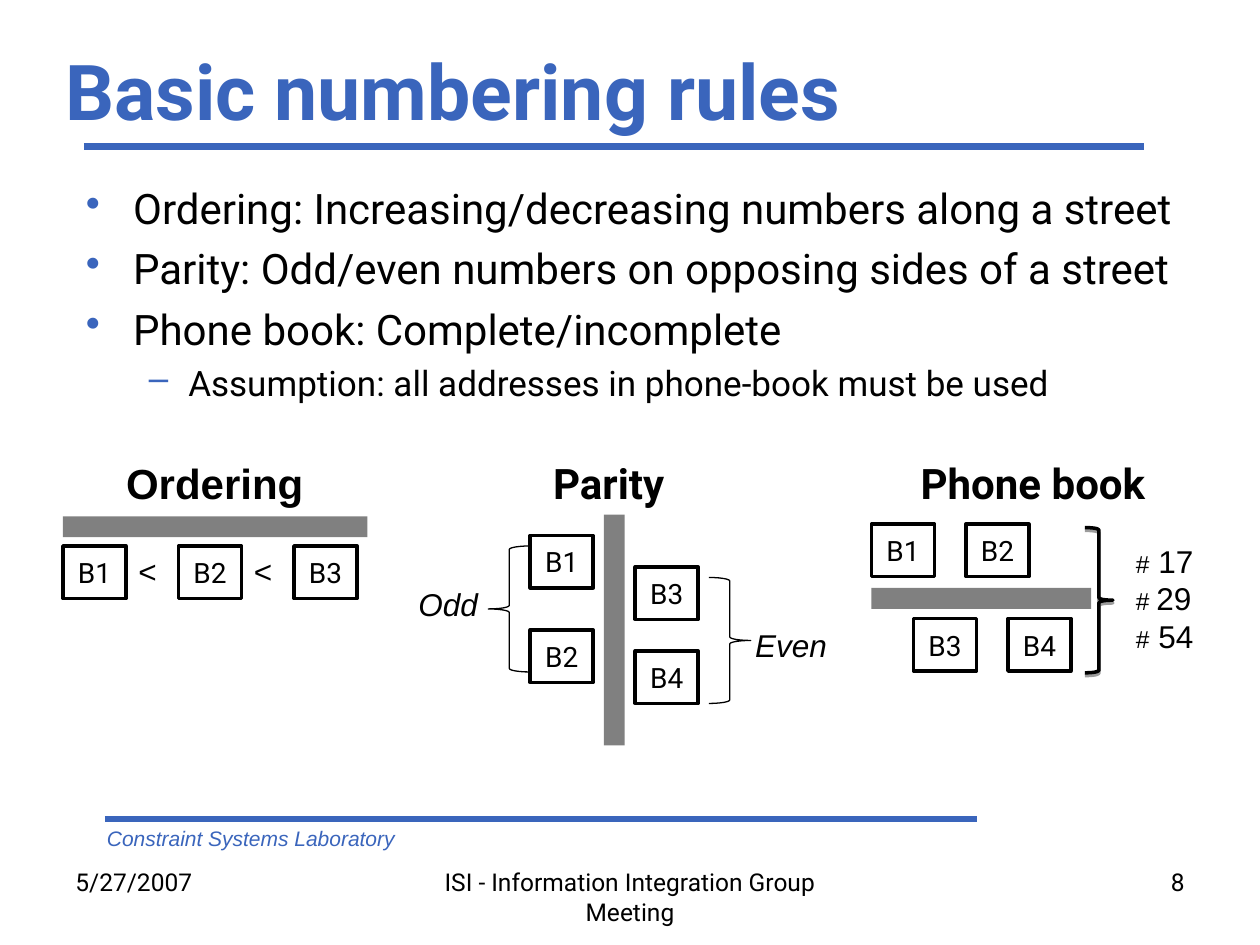
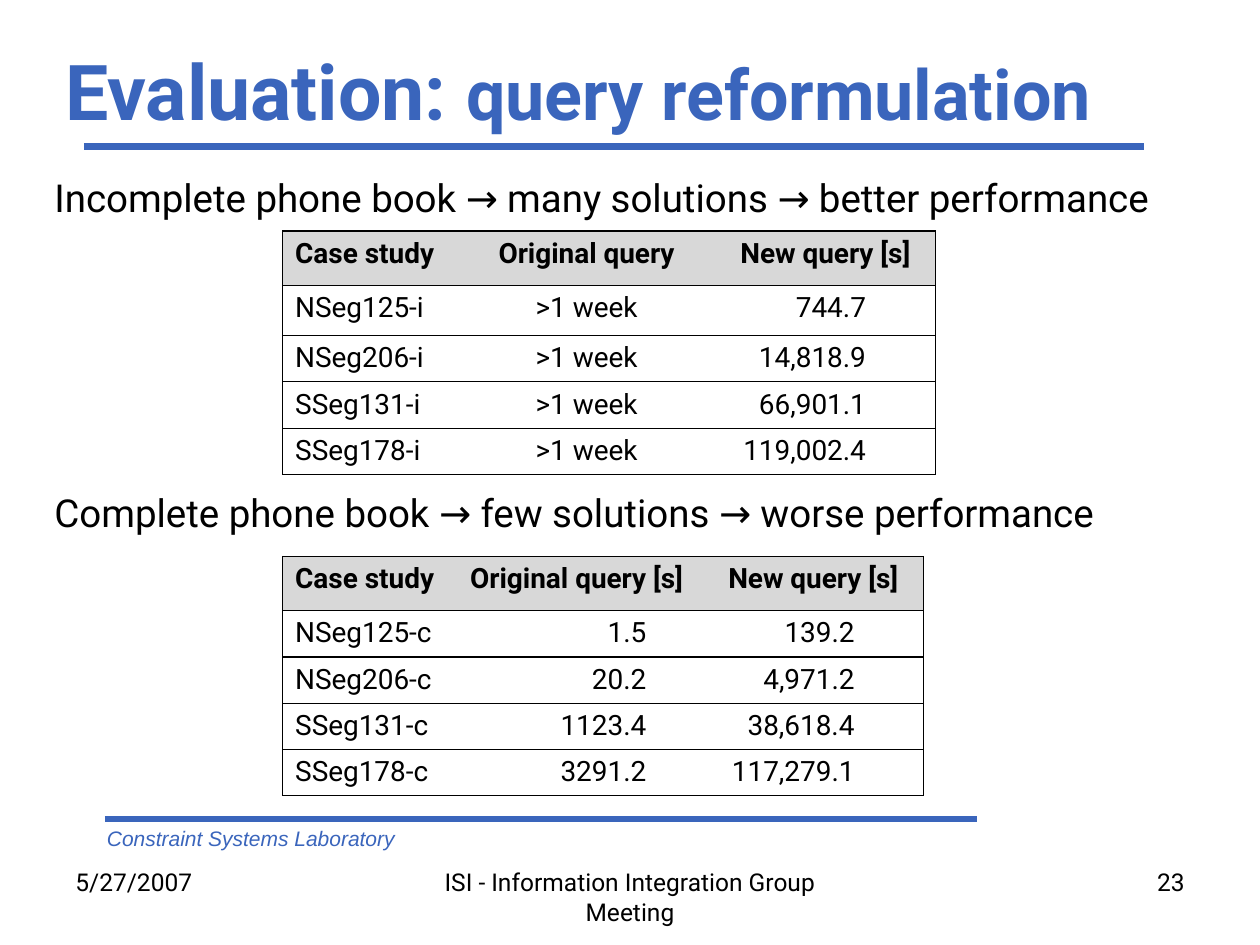
"""Build two slides on house numbering rules and query reformulation results."""
from lxml.etree import SubElement
from pptx import Presentation
from pptx.dml.color import RGBColor
from pptx.enum.shapes import MSO_CONNECTOR, MSO_SHAPE as SHAPE
from pptx.enum.text import MSO_ANCHOR as ANCHOR, MSO_AUTO_SIZE, PP_ALIGN as ALIGN
from pptx.oxml import parse_xml
from pptx.oxml.ns import nsdecls, qn
from pptx.util import Pt

BLUE, BLACK, WHITE, GREY, HEADER_GREY = "3A65BC", "000000", "FFFFFF", "808080", "D8D8D8"
BODY_FONT, LABEL_FONT = "Roboto", "Arial"
LEFT, CENTER, RIGHT = ALIGN.LEFT, ALIGN.CENTER, ALIGN.RIGHT
BOX_WIDTH, BOX_HEIGHT = 36, 30


def color(value):
    return RGBColor.from_string(value)


def place(left, top, width, height):
    return [Pt(length) for length in (left, top, width, height)]


class SlideBuilder:
    def __init__(self, deck):
        self.deck = deck
        self.slide = None

    def start(self, title_runs, number):
        self.slide = self.deck.slides.add_slide(self.deck.slide_layouts[5])
        title = self.slide.shapes.title
        title.left, title.top, title.width, title.height = place(30, 24, 665, 54)
        frame = title.text_frame
        frame.word_wrap = True
        frame.auto_size = MSO_AUTO_SIZE.NONE
        frame.vertical_anchor = ANCHOR.MIDDLE
        para = frame.paragraphs[0]
        para.alignment = LEFT
        for text, size in title_runs:
            self.span(para, text, size, tint=BLUE, bold=True)
        self.rule(48, 654, 84)
        self.rule(60, 558, 468)
        self.text("Constraint Systems Laboratory", 54, 468, 378, 12,
                  font=LABEL_FONT, tint=BLUE, italic=True)
        self.text("5/27/2007", 36, 492, 168, 14)
        self.text("ISI - Information Integration Group Meeting", 246, 492, 228, 14, align=CENTER)
        self.text(number, 516, 492, 168, 14, align=RIGHT)

    def span(self, para, text, size, font=BODY_FONT, tint=BLACK, bold=False, italic=False):
        span = para.add_run()
        span.text = text
        span.font.size = Pt(size)
        span.font.name = font
        span.font.bold = bold
        span.font.italic = italic
        span.font.color.rgb = color(tint)

    def frame(self, left, top, width, height):
        box = self.slide.shapes.add_textbox(*place(left, top, width, height))
        box.text_frame.word_wrap = True
        return box.text_frame

    def text(self, text, left, top, width, size, align=LEFT, **style):
        para = self.frame(left, top, width, size * 1.2 + 7).paragraphs[0]
        para.alignment = align
        self.span(para, text, size, **style)

    def lines(self, rows, left, top, width, height):
        frame = self.frame(left, top, width, height)
        for index, row in enumerate(rows):
            para = frame.paragraphs[0] if index == 0 else frame.add_paragraph()
            for text, size in row:
                self.span(para, text, size, font=LABEL_FONT)

    def bullets(self, items, left, top, width, height):
        frame = self.frame(left, top, width, height)
        for index, (text, mark, size, margin, hanging) in enumerate(items):
            para = frame.paragraphs[0] if index == 0 else frame.add_paragraph()
            props = para._p.get_or_add_pPr()
            props.set("marL", str(Pt(margin)))
            props.set("indent", str(-Pt(hanging)))
            tint = SubElement(props, qn("a:buClr"))
            SubElement(tint, qn("a:srgbClr"), val=BLUE)
            SubElement(props, qn("a:buChar"), char=mark)
            if index:
                para.space_before = Pt(size * 0.23)
            self.span(para, text, size)

    def rule(self, start, end, top):
        line = self.slide.shapes.add_connector(
            MSO_CONNECTOR.STRAIGHT, Pt(start), Pt(top), Pt(end), Pt(top))
        line.line.color.rgb = color(BLUE)
        line.line.width = Pt(4)
        SubElement(line._element.spPr, qn("a:effectLst"))

    def shape(self, kind, left, top, width, height, fill=None, line=None):
        shape = self.slide.shapes.add_shape(kind, *place(left, top, width, height))
        shape.shadow.inherit = False
        if fill:
            shape.fill.solid()
            shape.fill.fore_color.rgb = color(fill)
        else:
            shape.fill.background()
        if line:
            shape.line.color.rgb = color(BLACK)
            shape.line.width = Pt(line)
        else:
            shape.line.fill.background()
        return shape

    def street(self, left, top, width, height):
        self.shape(SHAPE.RECTANGLE, left, top, width, height, fill=GREY)

    def building(self, name, left, top):
        box = self.shape(SHAPE.RECTANGLE, left, top, BOX_WIDTH, BOX_HEIGHT, WHITE, 2)
        frame = box.text_frame
        frame.margin_left = frame.margin_right = 0
        frame.vertical_anchor = ANCHOR.MIDDLE
        para = frame.paragraphs[0]
        para.alignment = CENTER
        self.span(para, name, 16)

    def brace(self, kind, left, top, width, height, line=0.75, shadow=False):
        brace = self.shape(kind, left, top, width, height, line=line)
        if shadow:
            effects = brace._element.spPr.find(qn("a:effectLst"))
            effects.append(parse_xml(
                f'<a:outerShdw {nsdecls("a")} dist="{Pt(1.6)}" dir="5400000" rotWithShape="0">'
                f'<a:srgbClr val="{BLACK}"><a:alpha val="38000"/></a:srgbClr></a:outerShdw>'))

    def borders(self, cell, first, last):
        props = cell._tc.get_or_add_tcPr()
        visible = {"L": first, "R": last, "T": True, "B": True}
        for index, (side, shown) in enumerate(visible.items()):
            paint = (f'<a:solidFill><a:srgbClr val="{BLACK}"/></a:solidFill>'
                     if shown else "<a:noFill/>")
            props.insert(index, parse_xml(
                f'<a:ln{side} {nsdecls("a")} w="{Pt(0.75)}">{paint}</a:ln{side}>'))

    def table(self, rows, left, top, widths, heights, header_aligns, aligns):
        holder = self.slide.shapes.add_table(
            len(rows), len(widths), *place(left, top, sum(widths), sum(heights)))
        table = holder.table
        table.first_row = table.horz_banding = False
        for column, width in zip(table.columns, widths):
            column.width = Pt(width)
        for row, height in zip(table.rows, heights):
            row.height = Pt(height)
        for r, values in enumerate(rows):
            for c, value in enumerate(values):
                cell = table.cell(r, c)
                cell.fill.solid()
                cell.fill.fore_color.rgb = color(WHITE if r else HEADER_GREY)
                para = cell.text_frame.paragraphs[0]
                para.alignment = aligns[c] if r else header_aligns[c]
                if para.alignment == RIGHT:
                    cell.margin_right = Pt(39.6)
                self.span(para, value, 16, bold=r == 0)
                self.borders(cell, c == 0, c == len(widths) - 1)


def numbering_rules(page):
    page.start([("Basic numbering rules", 44)], "8")
    page.bullets([
        ("Ordering: Increasing/decreasing numbers along a street", "•", 24, 27, 27),
        ("Parity: Odd/even numbers on opposing sides of a street", "•", 24, 27, 27),
        ("Phone book: Complete/incomplete", "•", 24, 27, 27),
        ("Assumption: all addresses in phone-book must be used", "–", 20, 58.5, 22.5),
    ], 42, 101, 642, 150)

    for heading, left, font in (("Ordering", 65, LABEL_FONT), ("Parity", 309, BODY_FONT),
                                ("Phone book", 519, BODY_FONT)):
        page.text(heading, left, 258, 160, 24, font=font, bold=True)

    page.street(36, 295, 174, 12)
    for index in range(3):
        page.building(f"B{index + 1}", 36 + 66 * index, 312)
    for index in range(2):
        page.text("<", 72 + 66 * index, 312, 28, 18, font=LABEL_FONT)

    page.street(345, 294, 12, 132)
    for name, left, top in (("B1", 303, 306), ("B2", 303, 360),
                            ("B3", 363, 324), ("B4", 363, 372)):
        page.building(name, left, top)
    page.brace(SHAPE.LEFT_BRACE, 279, 312, 24, 72)
    page.brace(SHAPE.RIGHT_BRACE, 405, 330, 24, 72)
    page.text("Odd", 232, 331, 56, 18, font=LABEL_FONT, italic=True)
    page.text("Even", 424.5, 354, 64, 18, font=LABEL_FONT, italic=True)

    page.street(498, 336, 125.5, 12)
    for index in range(4):
        row, column = divmod(index, 2)
        page.building(f"B{index + 1}", 498 + 54 * column + 24 * row, 299.5 + 54 * row)
    page.brace(SHAPE.RIGHT_BRACE, 620, 301.5, 16, 83, line=2, shadow=True)
    page.lines([[("#", 14), (" 17", 18)], [("# ", 14), ("29", 18)], [("#", 14), (" 54", 18)]],
               642, 306, 60, 72)


def evaluation(page):
    page.start([("Evaluation: ", 44), ("query reformulation", 40)], "23")
    page.text("Incomplete phone book → many solutions → better performance", 24, 96, 680, 22)
    page.table([
        ("Case study", "Original query", "New query [s]"),
        ("NSeg125-i", ">1 week", "744.7"),
        ("NSeg206-i", ">1 week", "14,818.9"),
        ("SSeg131-i", ">1 week", "66,901.1"),
        ("SSeg178-i", ">1 week", "119,002.4"),
    ], 161.5, 132, (100, 147.5, 125.5), (31, 28.8, 25.7, 25.7, 25.7),
        (LEFT, CENTER, CENTER), (LEFT, CENTER, RIGHT))
    page.text("Complete phone book → few solutions → worse performance", 24, 276, 680, 22)
    page.table([
        ("Case study", "Original query [s]", "New query [s]"),
        ("NSeg125-c", "1.5", "139.2"),
        ("NSeg206-c", "20.2", "4,971.2"),
        ("SSeg131-c", "1123.4", "38,618.4"),
        ("SSeg178-c", "3291.2", "117,279.1"),
    ], 161.5, 318, (100, 147.5, 119), (31, 25.7, 25.7, 25.7, 25.7),
        (LEFT, LEFT, LEFT), (LEFT, RIGHT, RIGHT))


def main():
    deck = Presentation()
    deck.slide_width, deck.slide_height = Pt(720), Pt(540)
    page = SlideBuilder(deck)
    numbering_rules(page)
    evaluation(page)
    deck.save("out.pptx")


if __name__ == "__main__":
    main()
